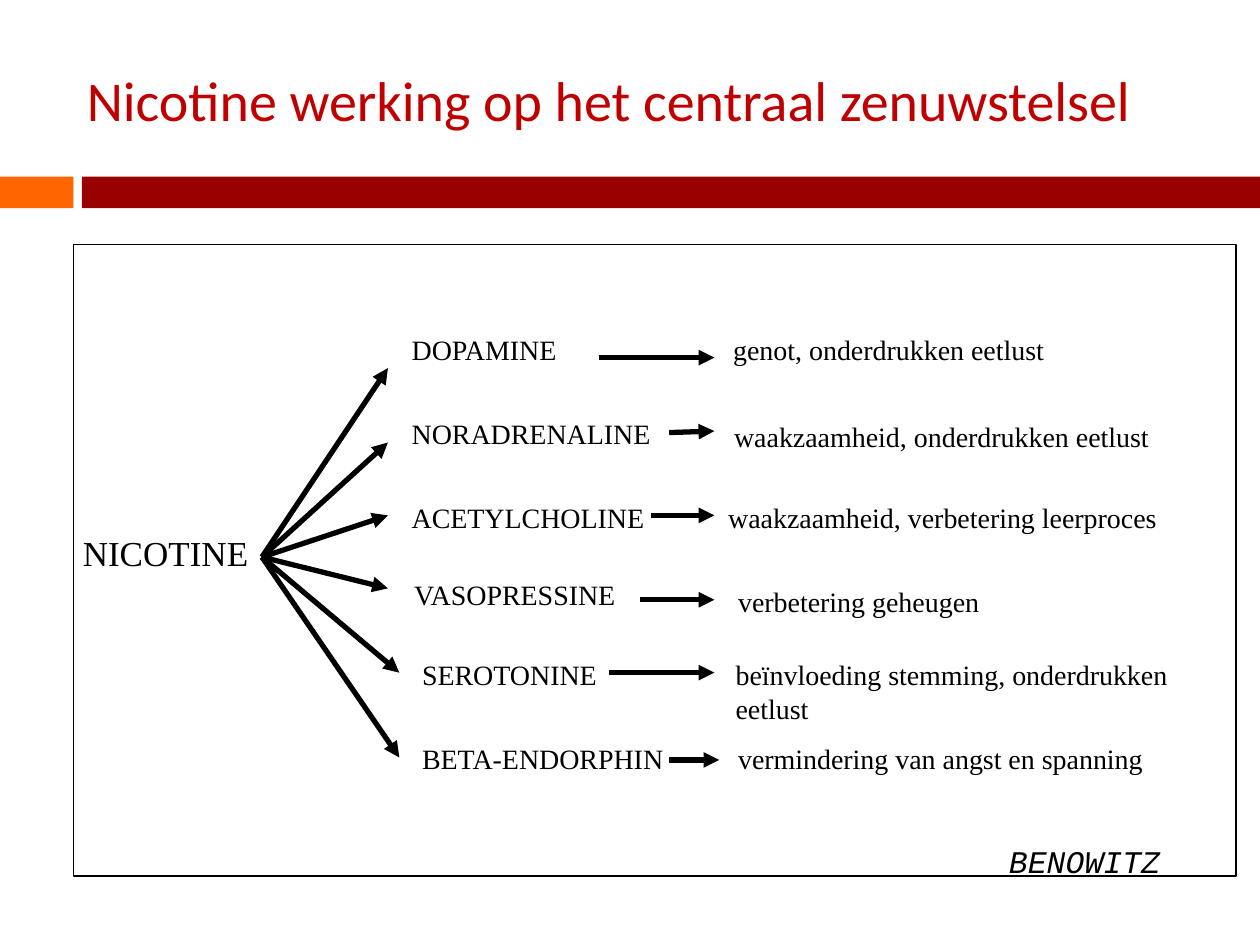
from dataclasses import dataclass

from lxml import etree
from pptx import Presentation
from pptx import util as u
from pptx.dml.color import RGBColor
from pptx.enum import shapes, text
from pptx.oxml import ns

BLACK = RGBColor(0x00, 0x00, 0x00)
WHITE = RGBColor(0xFF, 0xFF, 0xFF)
ORANGE = RGBColor(0xFF, 0x66, 0x00)
DARK_RED = RGBColor(0x99, 0x00, 0x00)
TITLE_RED = RGBColor(0xC0, 0x00, 0x00)

SERIF = {"name": "Times New Roman", "size": u.Pt(16)}
LINE_HEIGHT = 0.94
EXTRA_LINE_HEIGHT = 0.68


@dataclass
class Point:
    x: float
    y: float


@dataclass
class Label:
    """Text with its box, in centimetres."""
    words: str
    left: float
    top: float
    width: float
    wrap: bool = False

    @property
    def height(self) -> float:
        return LINE_HEIGHT + EXTRA_LINE_HEIGHT * self.words.count("\n")


@dataclass
class Pathway:
    """A neurotransmitter, its effect and the arrows leading to each."""
    fan_end: Point
    transmitter: Label
    arrow_start: Point
    arrow_end: Point
    effect: Label


FAN_START = Point(5.28, 11.23)
PATHWAYS = [
    Pathway(Point(7.82, 7.42), Label("DOPAMINE", 8.05, 6.58, 3.45),
            Point(12.07, 7.21), Point(14.4, 7.21),
            Label("genot, onderdrukken eetlust", 14.53, 6.58, 6.88)),
    Pathway(Point(7.82, 8.92), Label("NORADRENALINE", 8.05, 8.28, 5.36),
            Point(13.49, 8.72), Point(14.4, 8.69),
            Label("waakzaamheid, onderdrukken eetlust", 14.55, 8.33, 9.73, True)),
    Pathway(Point(7.82, 10.39), Label("ACETYLCHOLINE", 8.05, 9.96, 5.28),
            Point(13.13, 10.39), Point(14.4, 10.39),
            Label("waakzaamheid, verbetering leerproces", 14.43, 9.96, 9.3)),
    Pathway(Point(7.82, 11.86), Label("VASOPRESSINE", 8.1, 11.51, 4.6),
            Point(12.9, 12.09), Point(14.4, 12.09),
            Label("verbetering geheugen", 14.63, 11.66, 5.44)),
    Pathway(Point(8.05, 13.56), Label("SEROTONINE", 8.26, 13.13, 4.06),
            Point(12.27, 13.56), Point(14.4, 13.56),
            Label("beïnvloeding stemming, onderdrukken\neetlust", 14.58, 13.13, 9.5)),
    Pathway(Point(8.05, 15.27), Label("BETA-ENDORPHIN", 8.26, 14.83, 5.41),
            Point(13.49, 15.32), Point(14.5, 15.32),
            Label("vermindering van angst en spanning", 14.63, 14.83, 9.09)),
]


def add_text(parent, label: Label, font_format: dict, height: float = 0,
             color: RGBColor = BLACK, anchor=text.MSO_ANCHOR.TOP) -> None:
    box = parent.add_textbox(u.Cm(label.left), u.Cm(label.top),
                             u.Cm(label.width), u.Cm(height or label.height))
    frame = box.text_frame
    frame.text = label.words
    frame.word_wrap = label.wrap
    frame.vertical_anchor = anchor
    for paragraph in frame.paragraphs:
        font = paragraph.runs[0].font
        font.color.rgb = color
        for attribute, value in font_format.items():
            setattr(font, attribute, value)


def add_rectangle(parent, left: float, top: float, width: float, height: float,
                  fill: RGBColor, outlined: bool = False) -> None:
    shape = parent.add_shape(shapes.MSO_SHAPE.RECTANGLE, u.Cm(left), u.Cm(top),
                             u.Cm(width), u.Cm(height))
    shape.shadow.inherit = False
    shape.fill.solid()
    shape.fill.fore_color.rgb = fill
    if outlined:
        shape.line.color.rgb = BLACK
        shape.line.width = u.Pt(0.75)
    else:
        shape.line.fill.background()


def add_arrow(parent, start: Point, end: Point) -> None:
    arrow = parent.add_connector(shapes.MSO_CONNECTOR.STRAIGHT, u.Cm(start.x),
                                 u.Cm(start.y), u.Cm(end.x), u.Cm(end.y))
    arrow.line.color.rgb = BLACK
    arrow.line.width = u.Pt(3)
    etree.SubElement(arrow.line._get_or_add_ln(), ns.qn("a:tailEnd"), type="triangle")
    etree.SubElement(arrow._element.spPr, ns.qn("a:effectLst"))


def main() -> None:
    presentation = Presentation()
    presentation.slide_width, presentation.slide_height = u.Cm(25.4), u.Cm(19.05)
    slide = presentation.slides.add_slide(presentation.slide_layouts[6])

    add_rectangle(slide.shapes, 0, 3.56, 1.48, 0.64, ORANGE)
    add_rectangle(slide.shapes, 1.65, 3.56, 23.75, 0.64, DARK_RED)
    add_text(slide.shapes,
             Label("Nicotine werking op het centraal zenuwstelsel", 1.5, 0.41, 25.4, True),
             {"name": "Calibri", "size": u.Pt(32)}, 3.18, TITLE_RED,
             text.MSO_ANCHOR.MIDDLE)

    diagram = slide.shapes.add_group_shape().shapes
    add_rectangle(diagram, 1.48, 4.93, 23.44, 12.73, WHITE, outlined=True)
    add_text(diagram, Label("NICOTINE", 1.42, 10.59, 3.89),
             SERIF | {"size": u.Pt(20)}, 1.12)
    for pathway in PATHWAYS:
        add_arrow(diagram, FAN_START, pathway.fan_end)
        add_text(diagram, pathway.transmitter, SERIF)
        add_arrow(diagram, pathway.arrow_start, pathway.arrow_end)
        add_text(diagram, pathway.effect, SERIF)
    add_text(diagram, Label("BENOWITZ", 20.09, 16.84, 3.86),
             {"name": "Courier New", "size": u.Pt(18), "italic": True}, 1.02)

    presentation.save("out.pptx")


if __name__ == "__main__":
    main()
